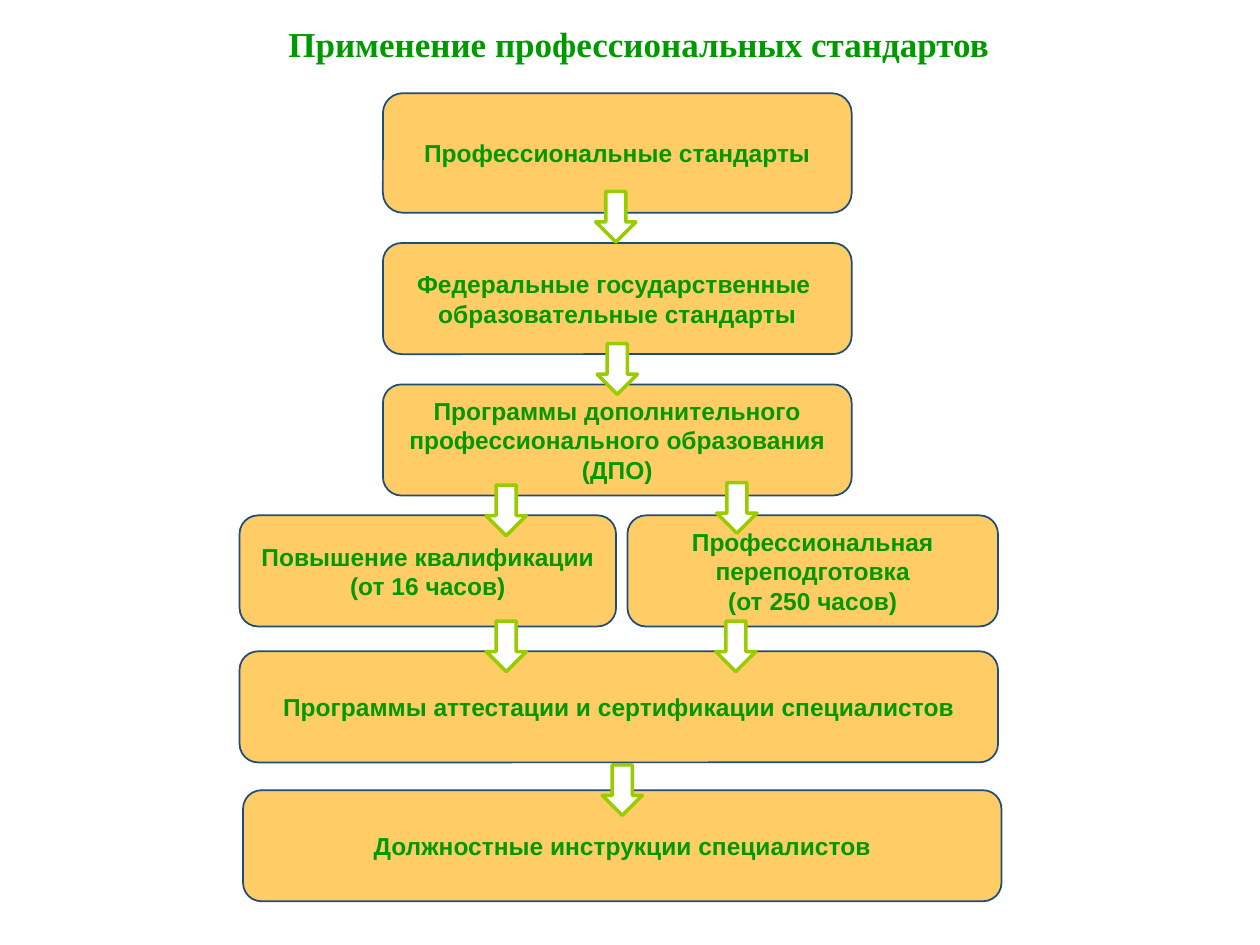
from pptx import Presentation
from pptx.dml.color import RGBColor
from pptx.enum.shapes import MSO_SHAPE
from pptx.enum.text import MSO_ANCHOR, MSO_AUTO_SIZE, PP_ALIGN
from pptx.util import Cm, Pt

ROUNDED = MSO_SHAPE.ROUNDED_RECTANGLE
DOWN_ARROW = MSO_SHAPE.DOWN_ARROW
MIDDLE = MSO_ANCHOR.MIDDLE
CENTER = PP_ALIGN.CENTER
GROW = MSO_AUTO_SIZE.SHAPE_TO_FIT_TEXT

COLORS = {
    "text": "009900",
    "box": "FFCC66",
    "box_line": "1F4D78",
    "arrow": "FFFFFF",
    "arrow_line": "99CC00",
}

TITLE = "Применение профессиональных стандартов"
TITLE_AREA = (2.29, 0.33, 21.18, 1.09)

NARROW, WIDE = 9.45, 15.29
BOX_HEIGHT = 2.24
BOXES = [
    (7.72, 1.88, NARROW, 2.41, ["Профессиональные стандарты"]),
    (7.72, 4.9, NARROW, BOX_HEIGHT,
     ["Федеральные государственные ", "образовательные стандарты"]),
    (7.72, 7.75, NARROW, BOX_HEIGHT,
     ["Программы дополнительного", "профессионального образования (ДПО)"]),
    (4.83, 10.39, 7.59, BOX_HEIGHT, ["Повышение квалификации", "(от 16 часов)"]),
    (12.65, 10.39, 7.47, BOX_HEIGHT,
     ["Профессиональная переподготовка", "(от 250 часов)"]),
    (4.83, 13.13, WIDE, BOX_HEIGHT,
     ["Программы аттестации и сертификации специалистов"]),
    (4.9, 15.93, WIDE, BOX_HEIGHT, ["Должностные инструкции специалистов"]),
]

ARROW_SIZE = (0.81, 1.02)
ARROWS = [
    (12.01, 3.86),
    (12.04, 6.93),
    (9.8, 9.78),
    (14.45, 9.73),
    (9.8, 12.52),
    (14.43, 12.52),
    (12.14, 15.42),
]


def color(name):
    return RGBColor.from_string(COLORS[name])


def write_text(shape, lines, font="Arial", size=14):
    frame = shape.text_frame
    frame.word_wrap = True
    for index, line in enumerate(lines):
        paragraph = frame.add_paragraph() if index else frame.paragraphs[0]
        paragraph.alignment = CENTER
        run = paragraph.add_run()
        run.text = line
        run.font.name = font
        run.font.size = Pt(size)
        run.font.bold = True
        run.font.color.rgb = color("text")


def add_block(slide, kind, area, fill, line, width):
    shape = slide.shapes.add_shape(kind, *map(Cm, area))
    shape.shadow.inherit = False
    shape.fill.solid()
    shape.fill.fore_color.rgb = color(fill)
    shape.line.color.rgb = color(line)
    shape.line.width = Pt(width)
    return shape


def main():
    presentation = Presentation()
    presentation.slide_width = Cm(25.4)
    presentation.slide_height = Cm(19.05)
    slide = presentation.slides.add_slide(presentation.slide_layouts[6])

    for *area, lines in BOXES:
        box = add_block(slide, ROUNDED, area, "box", "box_line", 1)
        box.text_frame.vertical_anchor = MIDDLE
        write_text(box, lines)

    for position in ARROWS:
        add_block(slide, DOWN_ARROW, position + ARROW_SIZE, "arrow", "arrow_line", 2)

    title = slide.shapes.add_textbox(*map(Cm, TITLE_AREA))
    write_text(title, [TITLE], font="Times New Roman", size=20)
    title.text_frame.auto_size = GROW

    presentation.save("out.pptx")


if __name__ == "__main__":
    main()
